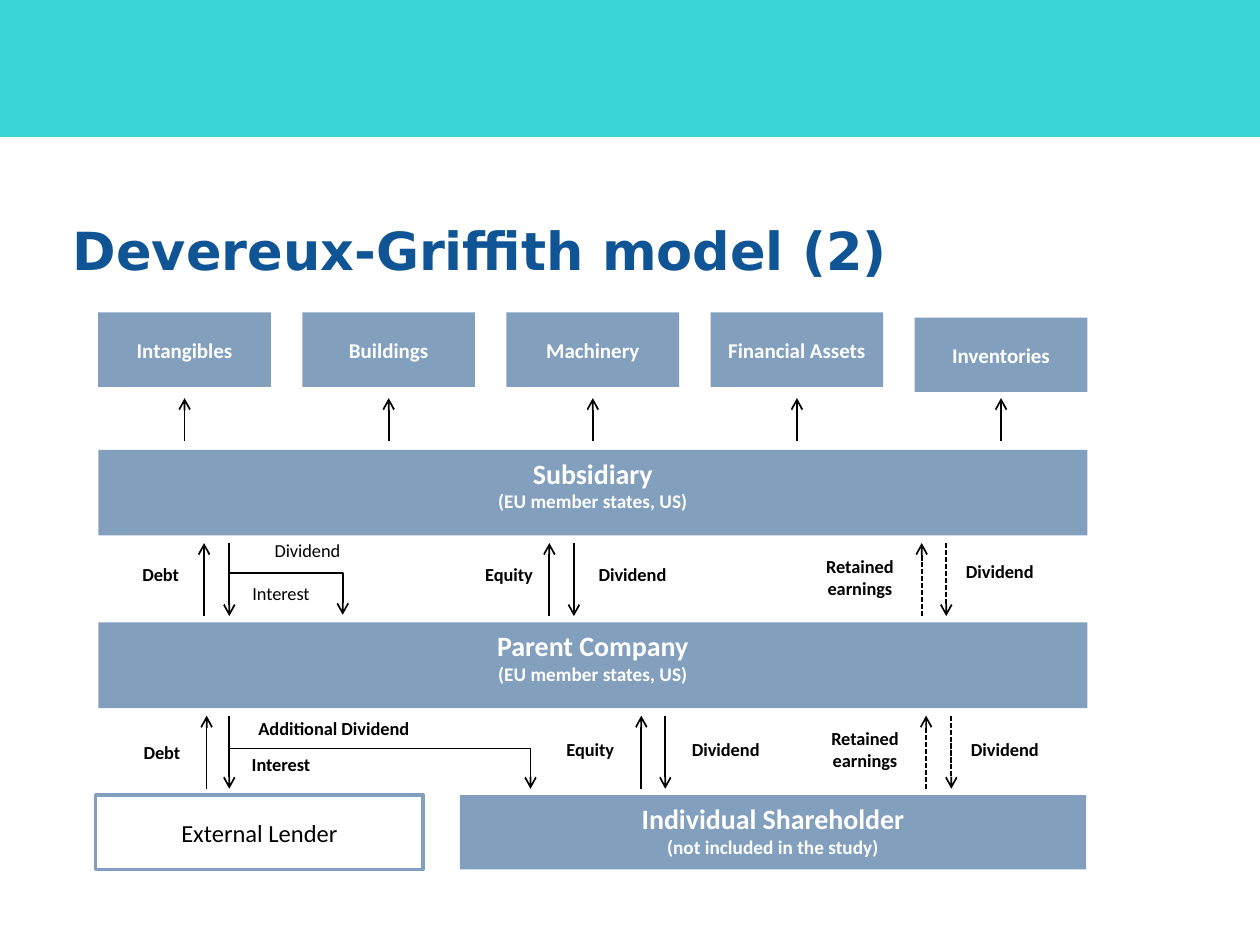
"""Build the Devereux-Griffith model slide on a grid of 100 columns by 75 rows."""
from lxml.etree import SubElement
from pptx import Presentation
from pptx.dml.color import RGBColor
from pptx.enum.dml import MSO_LINE
from pptx.enum.shapes import MSO_CONNECTOR as CONN, MSO_SHAPE as SHAPE
from pptx.enum.text import MSO_ANCHOR as ANCHOR, PP_ALIGN as ALIGN
from pptx.oxml.ns import qn
from pptx.util import Inches, Pt

CELL = Inches(0.1)
TEAL = RGBColor(0x38, 0xD4, 0xD6)
STEEL = RGBColor(0x82, 0xA0, 0xBE)
NAVY = RGBColor(0x0F, 0x54, 0x94)
WHITE = RGBColor(255, 255, 255)
BLACK = RGBColor(0, 0, 0)

LEFT, FULL = 7.8, 78.5
ASSETS = ["Intangibles", "Buildings", "Machinery", "Financial Assets", "Inventories"]
ASSET_PITCH, ASSET_W, ASSET_H = 16.2, 13.7, 5.9
BAR_ROWS = [35.7 + 13.7 * i for i in range(3)]
GAP_ROWS = [row + 7.4 for row in BAR_ROWS[:2]]
ARROW_H = 5.8
BARS = [
    (LEFT, FULL, 6.8, "Subsidiary", "(EU member states, US)"),
    (LEFT, FULL, 6.8, "Parent Company", "(EU member states, US)"),
    (36.5, 49.7, 5.9, "Individual Shareholder", "(not included in the study)"),
]
FLOWS = [
    [(16.2, 18.2, False), (43.6, 45.55, False), (73.15, 75.1, True)],
    [(16.4, 18.2, False), (50.9, 52.8, False), (73.5, 75.5, True)],
]
BRANCHES = [(18.2, 45.5, 27.2, 48.8), (18.2, 59.4, 42.1, 62.6)]
LABELS = [
    ("Debt", 9.7, 44.2, 6.1, True),
    ("Interest", 18.2, 45.7, 8.2, False),
    ("Dividend", 17.3, 42.3, 14.2, False),
    ("Equity", 36.7, 44.2, 7.4, True),
    ("Dividend", 43.1, 44.2, 14.2, True),
    ("Retained earnings", 63.5, 43.6, 9.5, True),
    ("Dividend", 71.6, 44, 15.5, True),
    ("Debt", 9.8, 58.3, 6.1, True),
    ("Interest", 18.2, 59.3, 8.2, True),
    ("Additional Dividend", 16.1, 56.4, 20.8, True),
    ("Equity", 43.3, 58.1, 7.1, True),
    ("Dividend", 50.5, 58.1, 14.2, True),
    ("Retained earnings", 63.9, 57.2, 9.5, True),
    ("Dividend", 72, 58.1, 15.5, True),
]


def grid(*cells):
    """Convert grid cells to slide lengths."""
    return [int(c * CELL) for c in cells]


def write(sp, lines, color, bold=True, anchor=ANCHOR.MIDDLE, align=ALIGN.CENTER, font="Calibri"):
    """Write (text, size) lines into a shape, one paragraph each."""
    tf = sp.text_frame
    tf.word_wrap = True
    tf.vertical_anchor = anchor
    for i, (text, size) in enumerate(lines):
        p = tf.add_paragraph() if i else tf.paragraphs[0]
        p.text = text
        p.alignment = align
        p.font.name, p.font.size, p.font.bold = font, Pt(size), bold
        p.font.color.rgb = color


def add_box(s, x, y, w, h, fill, line=None, width=1):
    """Add a flat rectangle with an optional outline."""
    sp = s.shapes.add_shape(SHAPE.RECTANGLE, *grid(x, y, w, h))
    sp.shadow.inherit = False
    sp.fill.solid()
    sp.fill.fore_color.rgb = fill
    if line is None:
        sp.line.fill.background()
    else:
        sp.line.color.rgb = line
        sp.line.width = Pt(width)
    return sp


def add_text(s, x, y, w, h, *args, **style):
    """Add a text box."""
    write(s.shapes.add_textbox(*grid(x, y, w, h)), *args, **style)


def add_arrow(s, x1, y1, x2, y2, dashed=False, kind=CONN.STRAIGHT):
    """Add a thin black connector with an open head at its end."""
    cn = s.shapes.add_connector(kind, *grid(x1, y1, x2, y2))
    cn.line.color.rgb = BLACK
    cn.line.width = Pt(1)
    if dashed:
        cn.line.dash_style = MSO_LINE.SQUARE_DOT
    SubElement(cn.line._get_or_add_ln(), qn("a:tailEnd"), type="arrow")
    SubElement(cn._element.spPr, qn("a:effectLst"))
    return cn


def add_branch(s, x1, y1, x2, y2):
    """Add an elbow arrow that runs right and then down."""
    cn = add_arrow(s, x1, y1, x2, y2, kind=CONN.ELBOW)
    av = cn._element.spPr.find(qn("a:prstGeom")).get_or_add_avLst()
    SubElement(av, qn("a:gd"), name="adj1", fmla="val 100000")


def add_flow(s, row, up, down, dashed):
    """Add a pair of opposite vertical arrows between two bars."""
    add_arrow(s, up, row + ARROW_H, up, row, dashed)
    add_arrow(s, down, row, down, row + ARROW_H, dashed)


def add_asset(s, i, name):
    """Add an asset box and the arrow that leads up to it."""
    x = LEFT + i * ASSET_PITCH
    y = 25.2 if name == "Inventories" else 24.8
    write(add_box(s, x, y, ASSET_W, ASSET_H, STEEL), [(name, 12)], WHITE)
    mid = x + ASSET_W / 2
    add_arrow(s, mid, 35, mid, 31.6)


def main():
    """Build and save the slide."""
    prs = Presentation()
    prs.slide_width, prs.slide_height = grid(100, 75)
    s = prs.slides.add_slide(prs.slide_layouts[6])
    add_box(s, 0, 0, 100, 10.8, TEAL, TEAL, 0.75)
    add_text(s, 4.8, 14.7, 90, 10.2, [("Devereux-Griffith model (2)", 30)], NAVY,
             align=ALIGN.LEFT, font="DejaVu Sans")
    for i, name in enumerate(ASSETS):
        add_asset(s, i, name)
    for row, (x, w, h, name, note) in zip(BAR_ROWS, BARS):
        sp = add_box(s, x, row, w, h, STEEL)
        write(sp, [(name, 16), (note, 11)], WHITE, anchor=ANCHOR.TOP)
    lender = add_box(s, 7.6, 63.1, 26, 5.9, WHITE, STEEL, 2)
    write(lender, [("External Lender", 14)], BLACK, bold=False)
    for row, flows in zip(GAP_ROWS, FLOWS):
        for flow in flows:
            add_flow(s, row, *flow)
    for branch in BRANCHES:
        add_branch(s, *branch)
    for text, x, y, w, bold in LABELS:
        h = 4.9 if text.startswith("Retained") else 3
        add_text(s, x, y, w, h, [(text, 10.5)], BLACK, bold=bold, anchor=ANCHOR.TOP)
    prs.save("out.pptx")


if __name__ == "__main__":
    main()
